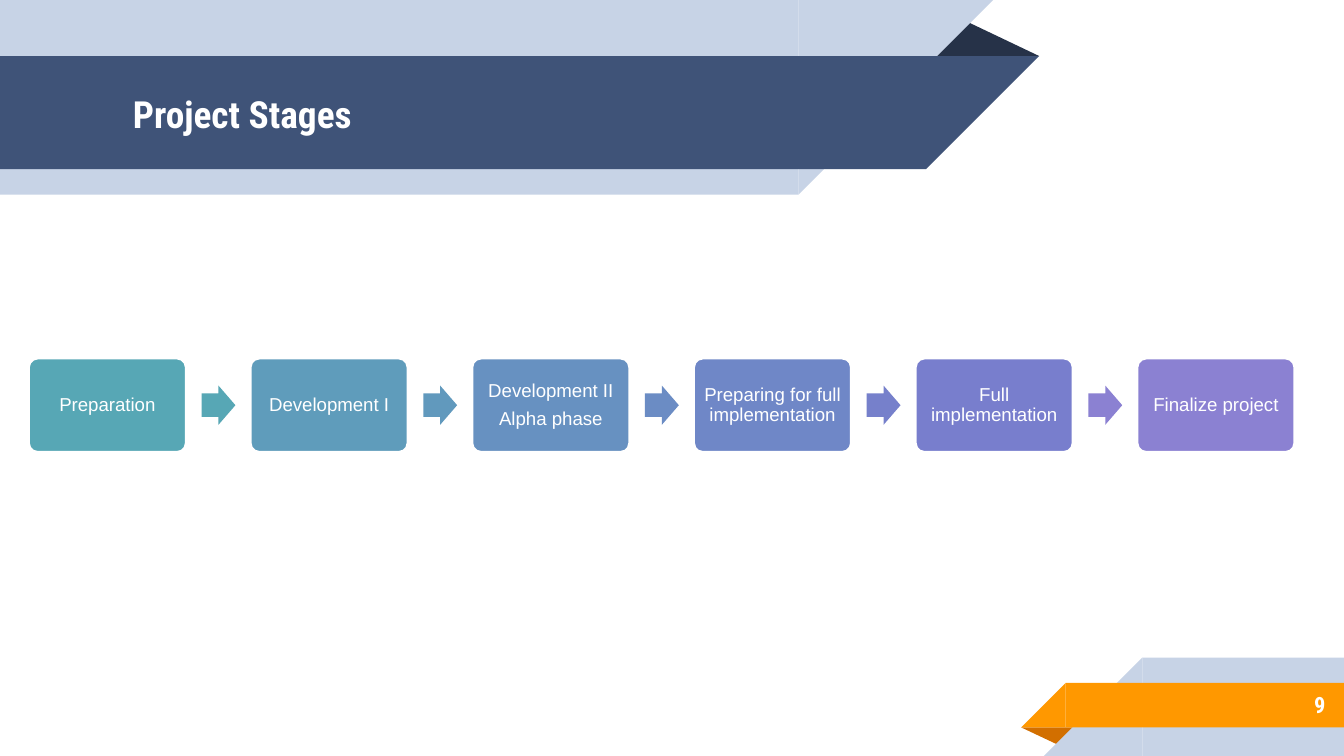
from pptx import Presentation
from pptx.dml.color import RGBColor
from pptx.enum.shapes import MSO_SHAPE
from pptx.enum.text import MSO_ANCHOR, PP_ALIGN
from pptx.util import Cm, Pt

RECT, CORNER, TRIANGLE = MSO_SHAPE.RECTANGLE, MSO_SHAPE.RIGHT_TRIANGLE, MSO_SHAPE.ISOSCELES_TRIANGLE
ROUNDED, ARROW = MSO_SHAPE.ROUNDED_RECTANGLE, MSO_SHAPE.RIGHT_ARROW
MIDDLE = MSO_ANCHOR.MIDDLE
LEFT, CENTER, RIGHT = PP_ALIGN.LEFT, PP_ALIGN.CENTER, PP_ALIGN.RIGHT

WHITE = RGBColor(0xFF, 0xFF, 0xFF)
PALE = RGBColor(0xC7, 0xD3, 0xE6)
NAVY = RGBColor(0x3F, 0x53, 0x78)
DARK = RGBColor(0x26, 0x32, 0x48)
ORANGE = RGBColor(0xFF, 0x98, 0x00)
BROWN = RGBColor(0xD2, 0x6F, 0x00)
TEAL = RGBColor(0x57, 0xA7, 0xB5)
VIOLET = RGBColor(0x8B, 0x81, 0xD2)

TITLE_FONT = {"name": "Roboto Condensed", "size": Pt(20), "bold": True}
NUMBER_FONT = {**TITLE_FONT, "size": Pt(12)}
STAGE_FONT = {"name": "Arial", "size": Pt(10)}
STAGE_SPACING = {"line_spacing": 0.9, "space_after": Pt(4)}

# Each stage: lines of text, box colour, colour of the arrow that follows
STAGES = [
    (["Preparation"], TEAL, TEAL),
    (["Development I"], RGBColor(0x5F, 0x9C, 0xBB), RGBColor(0x61, 0x99, 0xBD)),
    (["Development II", "Alpha phase"], RGBColor(0x67, 0x91, 0xC1), RGBColor(0x6B, 0x8C, 0xC4)),
    (["Preparing for full implementation"], RGBColor(0x6F, 0x87, 0xC7), RGBColor(0x76, 0x80, 0xCB)),
    (["Full implementation"], RGBColor(0x78, 0x7E, 0xCD), VIOLET),
    (["Finalize project"], VIOLET, None),
]
STAGE_LEFT, STAGE_PITCH = 0.53, 4.19


class StageSlide:
    def __init__(self, prs):
        self.s = prs.slides.add_slide(prs.slide_layouts[5])

    def shape(self, kind, box, color, rotation=0, adjustments=()):
        sp = self.s.shapes.add_shape(kind, *map(Cm, box))
        sp.shadow.inherit = False
        sp.fill.solid()
        sp.fill.fore_color.rgb = color
        sp.line.fill.background()
        sp.rotation = rotation
        for i, value in enumerate(adjustments):
            sp.adjustments[i] = value
        return sp

    def set_text(self, sp, lines, font, align, inset=0.25, spacing=None):
        tf = sp.text_frame
        tf.word_wrap = True
        tf.vertical_anchor = MIDDLE
        for side in ("left", "top", "right", "bottom"):
            setattr(tf, f"margin_{side}", Cm(inset))
        for i, line in enumerate(lines):
            p = tf.paragraphs[0] if i == 0 else tf.add_paragraph()
            p.alignment = align
            for name, value in (spacing or {}).items():
                setattr(p, name, value)
            r = p.add_run()
            r.text = line
            for name, value in font.items():
                setattr(r.font, name, value)
            r.font.color.rgb = WHITE

    def title(self, text, box):
        sp = self.s.shapes.title
        sp.left, sp.top, sp.width, sp.height = map(Cm, box)
        self.set_text(sp, [text], TITLE_FONT, LEFT)
        self.s.shapes.element.append(sp.element)  # in front of the banner

    def number(self, text, box):
        sp = self.s.shapes.add_textbox(*map(Cm, box))
        self.set_text(sp, [text], NUMBER_FONT, RIGHT)

    def top_band(self, top, width, height, color):
        self.shape(RECT, (0, top, width, height), color)
        self.shape(CORNER, (width, top, height, height), color, 90)

    def bottom_band(self, left, top, height, color):
        self.shape(RECT, (left, top, 25.4 - left, height), color)
        self.shape(CORNER, (left - height, top, height, height), color, 270)

    def stage(self, left, lines, color):
        sp = self.shape(ROUNDED, (left, 6.76, 3, 1.8), color, adjustments=[0.1])
        sp.line.color.rgb = WHITE
        sp.line.width = Pt(2)
        self.set_text(sp, lines, STAGE_FONT, CENTER, 0.1, STAGE_SPACING)

    def arrow(self, left, color):
        self.shape(ARROW, (left, 7.29, 0.64, 0.74), color, adjustments=[0.6, 0.5])


def main():
    prs = Presentation()
    prs.slide_width, prs.slide_height = Cm(25.4), Cm(14.29)
    slide = StageSlide(prs)

    # Title banner
    slide.shape(TRIANGLE, (17.48, 0.36, 2.16, 0.7), DARK, adjustments=[0.32])
    slide.top_band(0, 15.09, 3.68, PALE)
    slide.top_band(1.06, 17.5, 2.14, NAVY)
    slide.title("Project Stages", (2.26, 1.09, 15.27, 2.13))

    # Page number ribbon
    slide.shape(TRIANGLE, (19.3, 13.75, 1.09, 0.35), BROWN, 180, [0.32])
    slide.bottom_band(21.59, 12.43, 1.86, PALE)
    slide.bottom_band(20.14, 12.91, 0.84, ORANGE)
    slide.number("9", (21.16, 12.88, 4.14, 0.89))

    # Stages in a row, joined by arrows
    for i, (lines, color, arrow_color) in enumerate(STAGES):
        left = STAGE_LEFT + i * STAGE_PITCH
        slide.stage(left, lines, color)
        if arrow_color is not None:
            slide.arrow(left + 3.28, arrow_color)

    prs.save("out.pptx")


if __name__ == "__main__":
    main()
